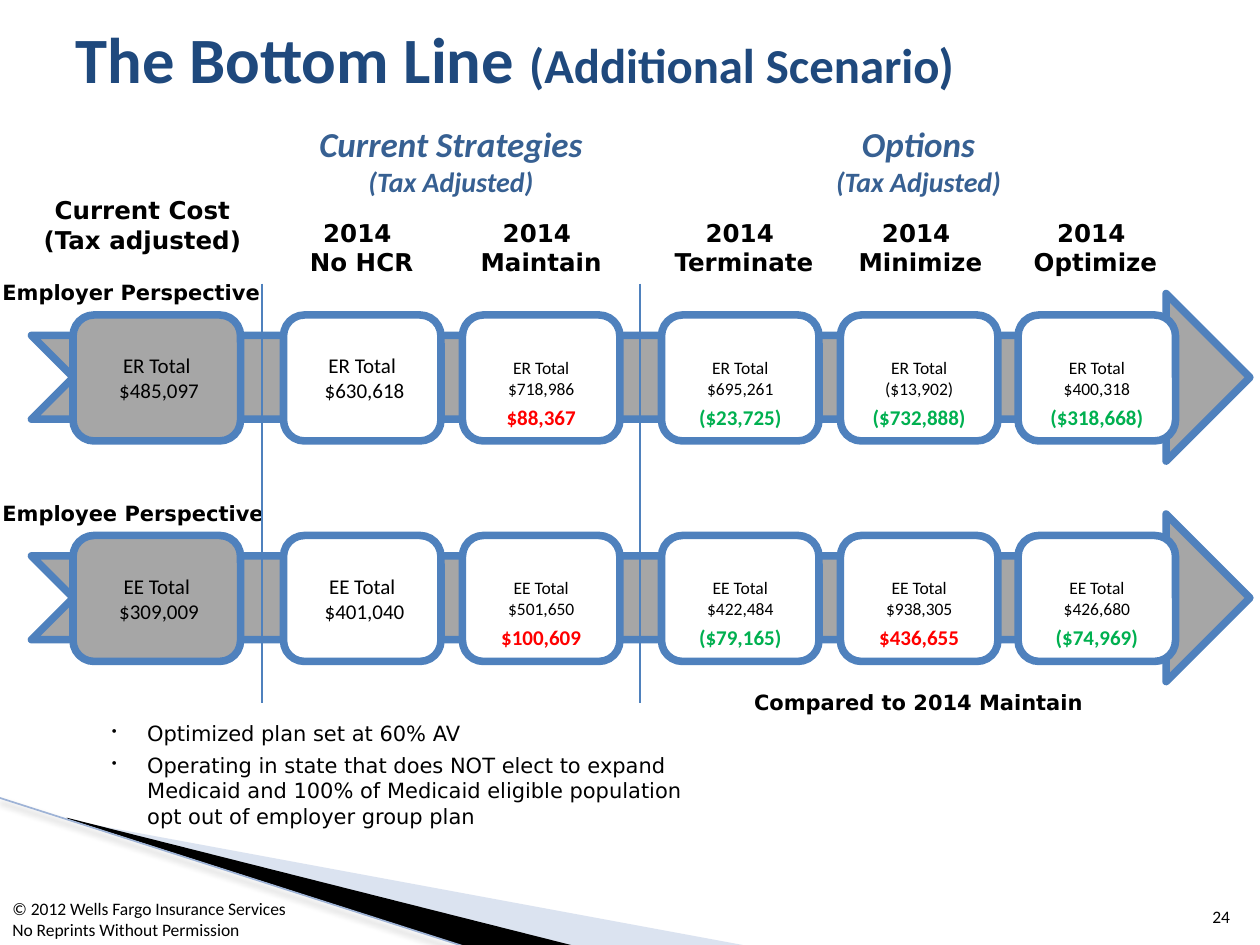
from lxml import etree
from pptx import Presentation
from pptx.dml.color import RGBColor
from pptx.enum.shapes import MSO_CONNECTOR, MSO_SHAPE
from pptx.enum.text import MSO_ANCHOR, PP_ALIGN
from pptx.oxml.ns import qn
from pptx.util import Inches, Pt

LEFT, MID, RIGHT = PP_ALIGN.LEFT, PP_ALIGN.CENTER, PP_ALIGN.RIGHT
TOP, CORE, BASE = MSO_ANCHOR.TOP, MSO_ANCHOR.MIDDLE, MSO_ANCHOR.BOTTOM
ROUND, ARROW = MSO_SHAPE.ROUNDED_RECTANGLE, MSO_SHAPE.NOTCHED_RIGHT_ARROW
STRAIGHT = MSO_CONNECTOR.STRAIGHT

BLACK = RGBColor(0x00, 0x00, 0x00)
WHITE = RGBColor(0xFF, 0xFF, 0xFF)
GRAY = RGBColor(0xA6, 0xA6, 0xA6)
BLUE = RGBColor(0x4F, 0x81, 0xBD)
NAVY = RGBColor(0x1F, 0x49, 0x7D)
STEEL = RGBColor(0x37, 0x60, 0x92)
PALE = RGBColor(0xA7, 0xB9, 0xDB)
EDGE = RGBColor(0x9E, 0xB3, 0xD6)
RED = RGBColor(0xFF, 0x00, 0x00)
GREEN = RGBColor(0x00, 0xB0, 0x50)
SANS, WIDE = "Calibri", "DejaVu Sans"

deck = Presentation()
deck.slide_width, deck.slide_height = Inches(10), Inches(7.5)
slide = deck.slides.add_slide(deck.slide_layouts[6])
shapes = slide.shapes


def text(words, spot=None, shape=None, size=12, sub=None, face=SANS, ink=BLACK,
         bold=False, slant=False, side=LEFT, anchor=TOP, wrap=True):
    shape = shape or shapes.add_textbox(*map(Inches, spot))
    frame = shape.text_frame
    frame.word_wrap = wrap
    frame.vertical_anchor = anchor
    count = 0
    for row, line in enumerate(words.split("\n")):
        para = frame.paragraphs[0] if row == 0 else frame.add_paragraph()
        para.alignment = side
        for part in line.split("|"):
            run = para.add_run()
            run.text = part
            font = run.font
            font.name, font.bold, font.italic = face, bold, slant
            font.size = Pt(sub if sub and count else size)
            font.color.rgb = ink
            count += 1
    return frame


def block(kind, spot, fill):
    shape = shapes.add_shape(kind, *map(Inches, spot))
    shape.shadow.inherit = False
    shape.fill.solid()
    shape.fill.fore_color.rgb = fill
    shape.line.color.rgb = BLUE
    shape.line.width = Pt(4.33)
    etree.SubElement(shape.line._ln, qn("a:round"))
    return shape


wedges = [
    (PALE, 40, [(0.55, 6.51), (5.95, 7.51), (4.56, 7.51), (0.55, 6.5)]),
    (BLACK, 100, [(0.53, 6.49), (4.57, 7.51), (3.72, 7.52), (0.54, 6.5)]),
]
for fill, alpha, dots in wedges:
    dots = [(Inches(x), Inches(y)) for x, y in dots]
    pen = shapes.build_freeform(*dots[0])
    pen.add_line_segments(dots[1:], close=True)
    wedge = pen.convert_to_shape()
    wedge.shadow.inherit = False
    wedge.line.fill.background()
    wedge.fill.solid()
    wedge.fill.fore_color.rgb = fill
    if alpha < 100:
        tint = wedge._element.spPr.find(qn("a:solidFill"))[0]
        etree.SubElement(tint, qn("a:alpha"), val=str(alpha * 1000))

rules = [
    (-0.01, 6.33, 3.71, 7.52, EDGE, 0.95),
    (2.08, 2.25, 2.08, 5.58, BLUE, 1.5),
    (5.08, 2.25, 5.08, 5.58, BLUE, 1.5),
]
lines = []
for *ends, ink, width in rules:
    line = shapes.add_connector(STRAIGHT, *map(Inches, ends))
    line.line.color.rgb = ink
    line.line.width = Pt(width)
    lines.append((line, etree.SubElement(line._element.spPr, qn("a:effectLst"))))
shade = etree.SubElement(lines[0][1], qn("a:outerShdw"), blurRad=str(Pt(4)),
                         dist=str(Pt(3)), dir="5400000", algn="t", rotWithShape="0")
tint = etree.SubElement(shade, qn("a:srgbClr"), val="000000")
etree.SubElement(tint, qn("a:alpha"), val="35000")

text("The Bottom Line |(Additional Scenario)", (0.5, 0.17, 8.97, 0.58),
     size=36.9, sub=27.9, ink=NAVY, bold=True, anchor=CORE)
for head, left, width in [("Current Strategies", 2.08, 3), ("Options", 5.25, 4.08)]:
    text(head + "\n(Tax Adjusted)", (left, 0.92, width, 0.71), size=20, sub=16,
         ink=STEEL, bold=True, slant=True, side=MID)

heads = [
    ("Current Cost\n(Tax adjusted)", 0.17, 1.5, 1.92),
    ("2014 \nNo HCR", 2.25, 1.68, 1.24),
    ("2014 \nMaintain", 3.67, 1.68, 1.25),
    ("2014 \nTerminate", 5.17, 1.68, 1.47),
    ("2014 \nMinimize", 6.67, 1.68, 1.27),
    ("2014 \nOptimize", 8.08, 1.68, 1.23),
]
for head, left, top, width in heads:
    text(head, (left, top, width, 0.57), size=14, face=WIDE, bold=True, side=MID)

cols = [(0.58, 1.33, GRAY, 12), (2.25, 1.25, WHITE, 12), (3.67, 1.25, WHITE, 10),
        (5.25, 1.25, WHITE, 10), (6.67, 1.25, WHITE, 10), (8.08, 1.25, WHITE, 10)]
bands = [
    ("Employer Perspective", "ER Total", 2.5,
     [" $485,097", " $630,618", "$718,986", "$695,261", "($13,902)", "$400,318"],
     ["", "", "$88,367", "($23,725)", "($732,888)", "($318,668)"]),
    ("Employee Perspective", "EE Total", 4.25,
     [" $309,009", " $401,040", "$501,650", "$422,484", "$938,305", "$426,680"],
     ["", "", "$100,609", "($79,165)", "$436,655", "($74,969)"]),
]
for name, label, top, sums, gaps in bands:
    block(ARROW, (0.25, top - 0.17, 9.67, 1.33), GRAY)
    text(name, (-0.08, top - 0.33, 2.42, 0.3), face=WIDE, bold=True)
    for (left, width, fill, size), total, gap in zip(cols, sums, gaps):
        card = block(ROUND, (left, top, width, 1), fill)
        text(label + "\n" + total, shape=card, size=size, side=MID,
             anchor=CORE, wrap=False)
        if gap:
            text(gap, (left - 0.25, top + 0.66, 1.75, 0.3), bold=True, side=MID,
                 ink=GREEN if gap.startswith("(") else RED, wrap=False)

for line, _ in lines[1:]:
    shapes._spTree.append(line._element)

text("Compared to 2014 Maintain", (5.25, 5.42, 4.08, 0.3), face=WIDE,
     bold=True, side=MID)
notes = text("Optimized plan set at 60% AV\n"
             "Operating in state that does NOT elect to expand Medicaid and 100% of "
             "Medicaid eligible population opt out of employer group plan",
             (0.67, 5.67, 5, 0.96), face=WIDE)
for row, para in enumerate(notes.paragraphs):
    props = para._p.get_or_add_pPr()
    props.set("marL", str(Inches(0.4)))
    props.set("indent", str(Inches(-0.28)))
    etree.SubElement(props, qn("a:buSzPct"), val="68000")
    etree.SubElement(props, qn("a:buChar"), char="•")
    if row:
        para.space_before = Pt(4)

text("© 2012 Wells Fargo Insurance Services\nNo Reprints Without Permission",
     (0, 7.08, 5, 0.44), size=10)
text("24", (9.46, 7.01, 0.4, 0.4), size=10, side=RIGHT, anchor=BASE)

deck.save("out.pptx")
